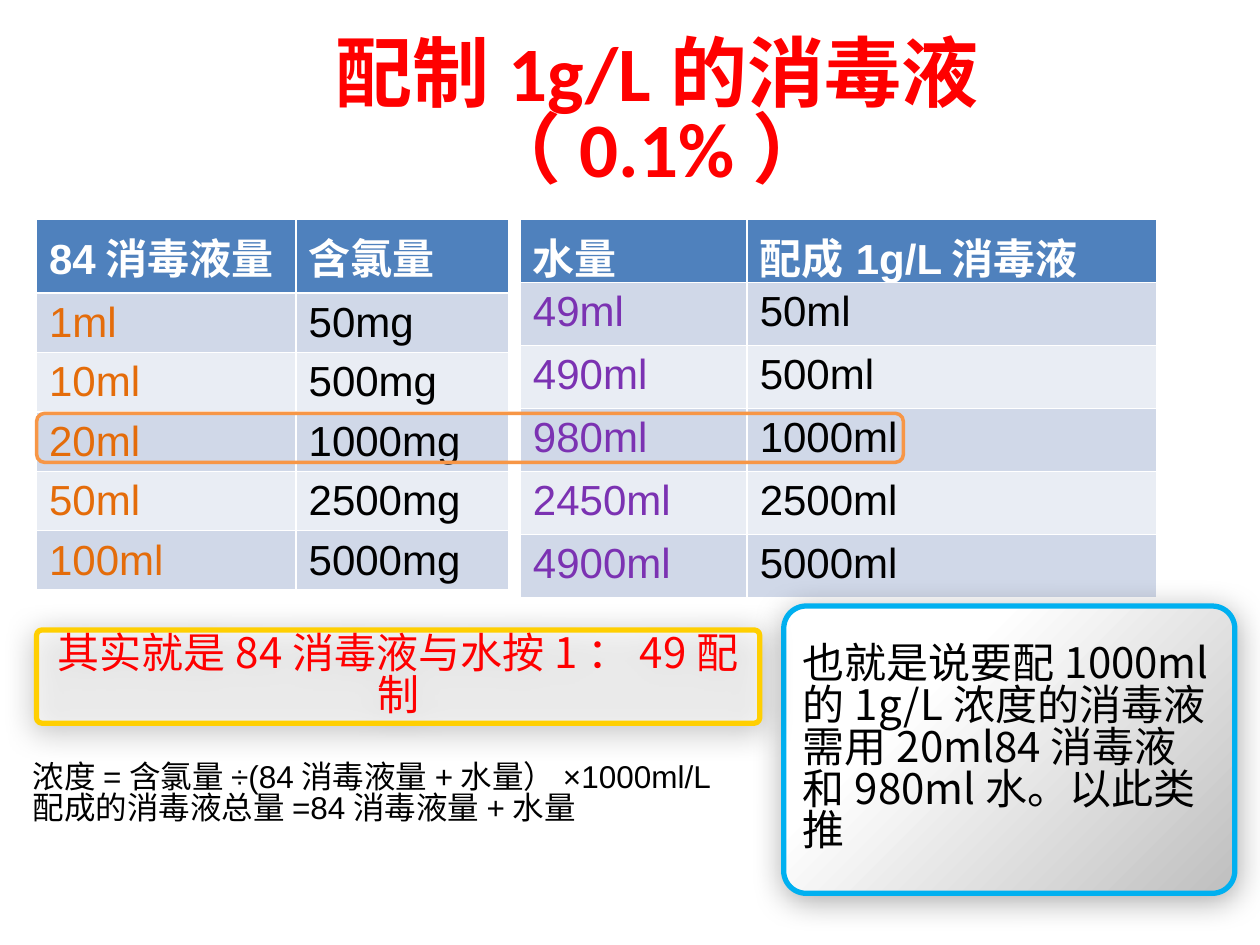
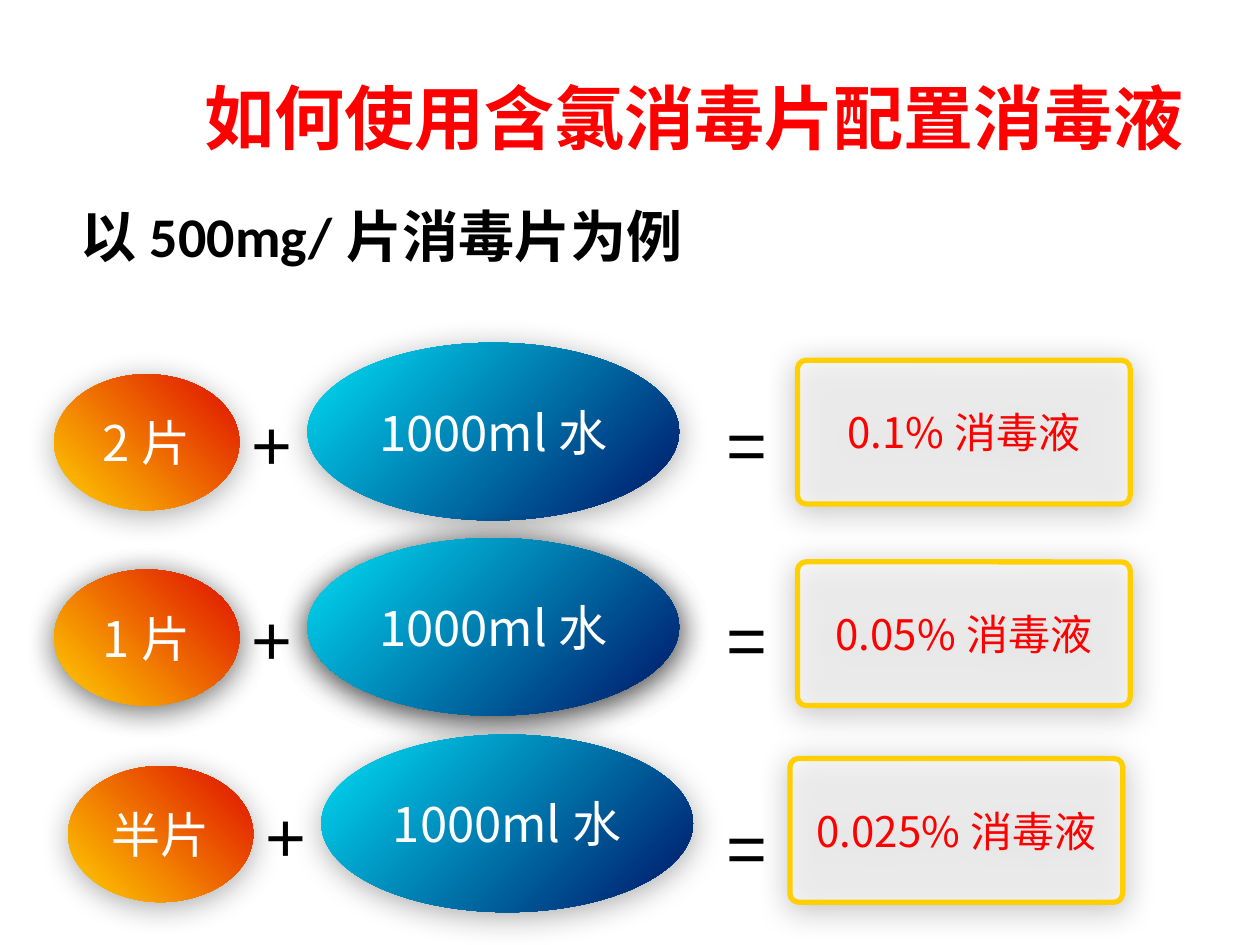
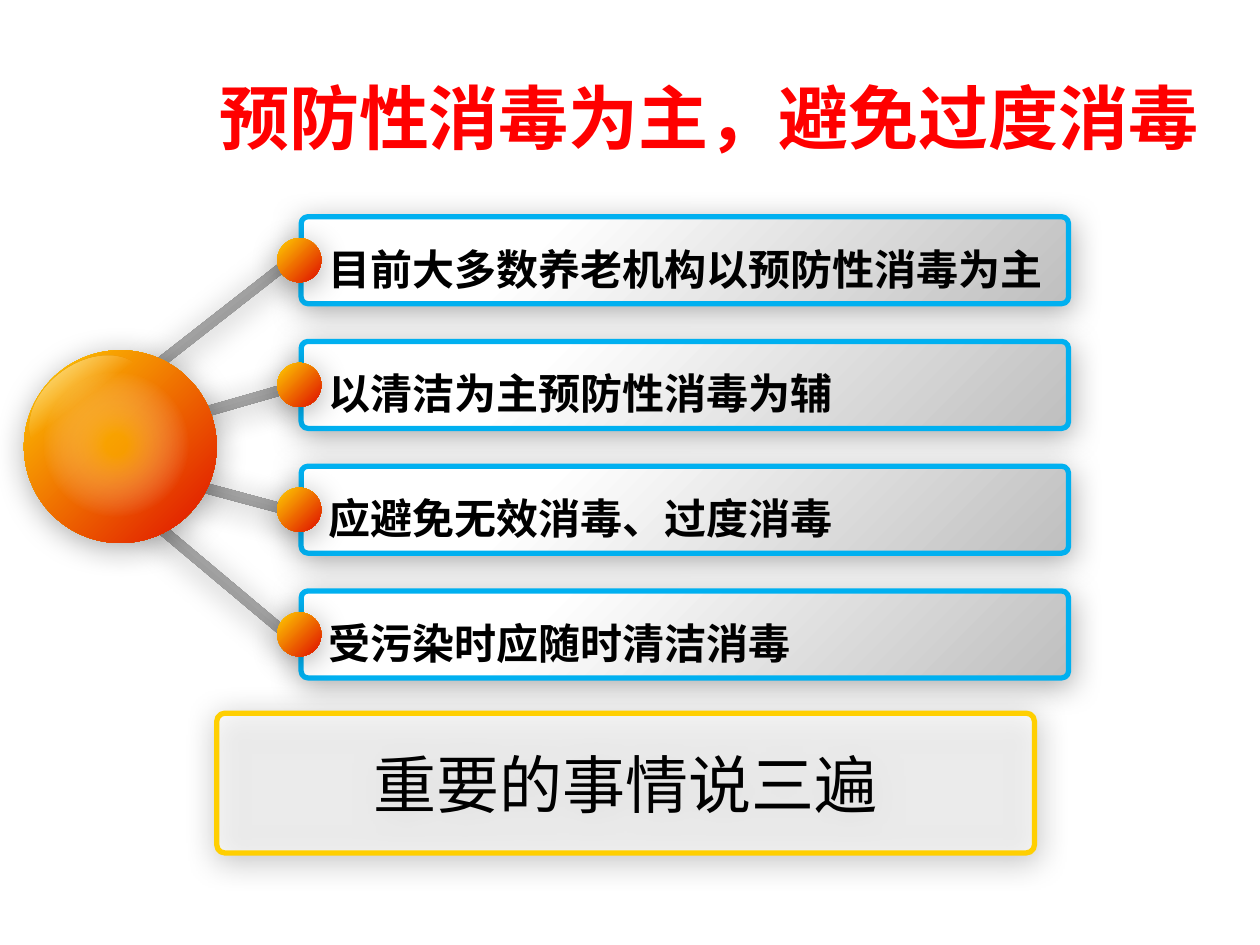
from dataclasses import dataclass

from lxml import etree
from pptx import Presentation
from pptx.dml.color import RGBColor
from pptx.enum.shapes import MSO_SHAPE
from pptx.enum.text import MSO_ANCHOR, PP_ALIGN
from pptx.oxml import parse_xml
from pptx.oxml.ns import nsdecls, qn
from pptx.util import Inches, Pt


@dataclass(frozen=True)
class Theme:
    title: str = "FF0000"
    ink: str = "000000"
    white: str = "FFFFFF"
    header: str = "4F81BD"
    bands: tuple = ("D0D8E8", "E9EDF4")
    dose: str = "E46C0A"
    water: str = "7B32B2"
    marker: str = "F79646"
    panel_line: str = "FFCF01"
    card_line: str = "00B0F0"
    head_font: str = "Calibri"
    body_font: str = "Arial"
    cjk_font: str = "Noto Sans CJK SC"
    text: int = 24
    note: int = 18
    pill: int = 28
    sub: int = 32
    closing: int = 36
    big: int = 40
    cover: int = 44
    tight: float = 0.83


T = Theme()

# Gradient stops: (position %, colour, opacity %)
ORANGE = [(0, "FFCF01", 100), (90, "E22000", 100)]
BLUE = [(0, "00DFF6", 100), (90, "002774", 100)]
SILVER = [(30, "FFFFFF", 100), (100, "BFBFBF", 100)]
GREY = [(0, "808080", 100), (100, "BFBFBF", 100)]
SHINE = [(0, "FFFFFF", 100), (45, "FFFFFF", 0)]
GLOW = [(10, "FFC000", 60), (70, "FFFFFF", 0)]

DOSE_TABLE = [
    ("84消毒液量", "含氯量"),
    ("1ml", "50mg"),
    ("10ml", "500mg"),
    ("20ml", "1000mg"),
    ("50ml", "2500mg"),
    ("100ml", "5000mg"),
]
WATER_TABLE = [
    ("水量", "配成1g/L消毒液"),
    ("49ml", "50ml"),
    ("490ml", "500ml"),
    ("980ml", "1000ml"),
    ("2450ml", "2500ml"),
    ("4900ml", "5000ml"),
]
FORMULAS = [
    "浓度=含氯量÷(84消毒液量+水量）×1000ml/L",
    "配成的消毒液总量=84消毒液量+水量",
]
EXAMPLE = "也就是说要配1000ml的1g/L浓度的消毒液需用20ml84消毒液和980ml水。以此类推"

# tablets, result, row left, row top, equals top, result left, result top, (tablet layers, water layers)
MIXES = [
    ("2片", "0.1%消毒液", 0.43, 2.72, 3.13, 6.33, 2.86, (1, 1)),
    ("1片", "0.05%消毒液", 0.43, 4.27, 4.68, 6.33, 4.46, (2, 3)),
    ("半片", "0.025%消毒液", 0.54, 5.83, 6.33, 6.27, 6.02, (1, 1)),
]

ADVICE = [
    "目前大多数养老机构以预防性消毒为主",
    "以清洁为主预防性消毒为辅",
    "应避免无效消毒、过度消毒",
    "受污染时应随时清洁消毒",
]
# left, top, length, rotation
SPOKES = [
    (0.75, 3.24, 1.68, 344),
    (0.75, 3.82, 1.66, 15),
    (0.61, 2.6, 1.93, 322),
    (0.59, 4.39, 1.93, 40),
]


def style(p, size, color, font, bold=False, align=PP_ALIGN.LEFT, spacing=None):
    p.alignment = align
    p.line_spacing = spacing
    for r in p.runs:
        r.font.size, r.font.bold, r.font.name = Pt(size), bold, font
        r.font.color.rgb = RGBColor.from_string(color)
        ea = etree.SubElement(r.font._element, qn("a:ea"))
        ea.set("typeface", T.cjk_font)


def add_text(s, box, lines, size, color=T.ink, font=T.body_font, anchor=MSO_ANCHOR.TOP, **kw):
    sp = s.shapes.add_textbox(*map(Inches, box))
    tf = sp.text_frame
    tf.word_wrap, tf.vertical_anchor = True, anchor
    tf.text = "\n".join(lines)
    for p in tf.paragraphs:
        style(p, size, color, font, **kw)
    return sp


def add_title(s, text, left, width, size=T.big, spacing=None):
    return add_text(s, (left, 0.3, width, 1.25), [text], size, T.title, T.head_font,
                    MSO_ANCHOR.MIDDLE, bold=True, align=PP_ALIGN.CENTER, spacing=spacing)


def gradient(stops, angle):
    """Gradient fill element; an angle of None makes it radial."""
    gs = "".join(
        f'<a:gs pos="{pos * 1000}"><a:srgbClr val="{color}">'
        f'<a:alpha val="{alpha * 1000}"/></a:srgbClr></a:gs>'
        for pos, color, alpha in stops)
    if angle is None:
        way = ('<a:path path="circle"><a:fillToRect l="50000" t="50000" '
               'r="50000" b="50000"/></a:path>')
    else:
        way = f'<a:lin ang="{angle * 60000}" scaled="0"/>'
    return parse_xml(f'<a:gradFill {nsdecls("a")} rotWithShape="1">'
                     f'<a:gsLst>{gs}</a:gsLst>{way}</a:gradFill>')


def add_figure(s, kind, box, stops=None, angle=45, line=None, weight=3, adj=None,
               rotation=0, shadow=True):
    sp = s.shapes.add_shape(kind, *map(Inches, box))
    sp.rotation = rotation
    if adj is not None:
        sp.adjustments[0] = adj
    sp.fill.background()
    if stops:
        props = sp._element.spPr
        props.replace(props.find(qn("a:noFill")), gradient(stops, angle))
    if line:
        sp.line.color.rgb = RGBColor.from_string(line)
        sp.line.width = Pt(weight)
    else:
        sp.line.fill.background()
    sp.shadow.inherit = False
    if shadow:
        sp._element.spPr.find(qn("a:effectLst")).append(parse_xml(
            f'<a:outerShdw {nsdecls("a")} blurRad="{Pt(17.8)}" dist="{Pt(3)}" '
            f'dir="{87 * 60000}" algn="ctr" rotWithShape="0">'
            '<a:srgbClr val="000000"><a:alpha val="33000"/></a:srgbClr></a:outerShdw>'))
    return sp


def label(sp, text, size, color, align=PP_ALIGN.CENTER, spacing=None):
    tf = sp.text_frame
    tf.word_wrap, tf.vertical_anchor = True, MSO_ANCHOR.MIDDLE
    tf.text = text
    style(tf.paragraphs[0], size, color, T.cjk_font, align=align, spacing=spacing)


def add_panel(s, box, text, size=T.text, color=T.title, spacing=None):
    """Translucent white panel with a yellow outline."""
    sp = add_figure(s, MSO_SHAPE.ROUNDED_RECTANGLE, box, line=T.panel_line, adj=0.059)
    sp.fill.solid()
    sp.fill.fore_color.rgb = RGBColor.from_string(T.white)
    tint = sp._element.spPr.find(qn("a:solidFill"))[0]
    etree.SubElement(tint, qn("a:alpha")).set("val", "60000")
    label(sp, text, size, color, spacing=spacing)


def add_card(s, box):
    return add_figure(s, MSO_SHAPE.ROUNDED_RECTANGLE, box, SILVER, line=T.card_line, adj=0.078)


def add_ellipse(s, box, stops, angle=45, **kw):
    return add_figure(s, MSO_SHAPE.OVAL, box, stops, angle, **kw)


def add_dose_table(s, left, data, widths, first_color, heights):
    tbl = s.shapes.add_table(len(data), len(widths), Inches(left), Inches(1.74),
                             Inches(sum(widths)), Inches(sum(heights))).table
    for col, width in zip(tbl.columns, widths):
        col.width = Inches(width)
    for i, (values, height) in enumerate(zip(data, heights)):
        tbl.rows[i].height = Inches(height)
        for j, value in enumerate(values):
            cell = tbl.cell(i, j)
            cell.text = value
            cell.fill.solid()
            fill = T.bands[(i - 1) % 2] if i else T.header
            cell.fill.fore_color.rgb = RGBColor.from_string(fill)
            color = (T.ink if j else first_color) if i else T.white
            style(cell.text_frame.paragraphs[0], T.text, color, T.body_font, bold=i == 0)


def build_dilution(s):
    add_dose_table(s, 0.29, DOSE_TABLE, (2.06, 1.69), T.dose, [0.42] * 6)
    add_title(s, "配制1g/L的消毒液（0.1%）", 1.41, 7.61, T.cover, T.tight)
    add_dose_table(s, 4.13, WATER_TABLE, (1.8, 3.25), T.water,
                   [0.42, 0.42, 0.5, 0.42, 0.42, 0.42])
    add_text(s, (0.16, 6.01, 6.15, 0.71), FORMULAS, T.note, spacing=T.tight)
    label(add_card(s, (6.22, 4.81, 3.58, 2.28)), EXAMPLE, T.text, T.ink,
          PP_ALIGN.LEFT, T.tight)
    add_figure(s, MSO_SHAPE.ROUNDED_RECTANGLE, (0.29, 3.28, 6.88, 0.39),
               line=T.marker, weight=2, shadow=False)
    add_panel(s, (0.29, 5, 5.74, 0.74), "其实就是84消毒液与水按1：49配制", spacing=T.tight)


def build_tablets(s):
    add_text(s, (0.54, 1.55, 9, 4.95), ["以500mg/片消毒片为例"], T.sub,
             font=T.head_font, bold=True)
    title = add_title(s, "如何使用含氯消毒片配置消毒液", 1.33, 8.62)
    title.text_frame.margin_right = Inches(0.36)
    for tablets, result, left, top, eq_top, res_left, res_top, layers in MIXES:
        tablet_layers, water_layers = layers
        plus_left = left + 1.47
        for _ in range(tablet_layers):
            pill = add_ellipse(s, (left, top + 0.25, 1.47, 1.08), ORANGE, 315)
            label(pill, tablets, T.pill, T.white)
        for _ in range(water_layers):
            water = add_ellipse(s, (plus_left + 0.54, top, 2.95, 1.41), BLUE)
            label(water, "1000ml水", T.pill, T.white)
        add_text(s, (plus_left, top + 0.41, 0.38, 0.77), ["+"], T.big)
        add_text(s, (5.67, eq_top, 0.38, 0.77), ["="], T.big)
        add_panel(s, (res_left, res_top, 2.64, 1.14), result)


def build_advice(s):
    add_title(s, "预防性消毒为主，避免过度消毒", 1.41, 8.43)
    for left, top, length, rotation in SPOKES:
        add_figure(s, MSO_SHAPE.ROUNDED_RECTANGLE, (left, top, length, 0.08), GREY, 270,
                   adj=0.5, rotation=rotation)
    add_ellipse(s, (0.19, 2.78, 1.53, 1.53), ORANGE)
    add_ellipse(s, (0.19, 2.88, 1.04, 0.74), SHINE, 90, rotation=323.1, shadow=False)
    add_ellipse(s, (0.34, 2.95, 1.16, 1.16), GLOW, None, shadow=False)
    for i, advice in enumerate(ADVICE):
        top = 1.72 + 0.99 * i
        add_card(s, (2.39, top, 6.09, 0.69))
        add_text(s, (2.51, top + 0.16, 6.03, 0.5), [advice], T.text,
                 font=T.cjk_font, bold=True)
        add_ellipse(s, (2.2, top + 0.17, 0.35, 0.35), ORANGE)
    add_panel(s, (1.72, 5.66, 6.49, 1.11), "重要的事情说三遍", T.closing, T.ink)


def main():
    prs = Presentation()
    prs.slide_width, prs.slide_height = Inches(10), Inches(7.5)
    for build in (build_dilution, build_tablets, build_advice):
        build(prs.slides.add_slide(prs.slide_layouts[6]))
    prs.save("out.pptx")


if __name__ == "__main__":
    main()
